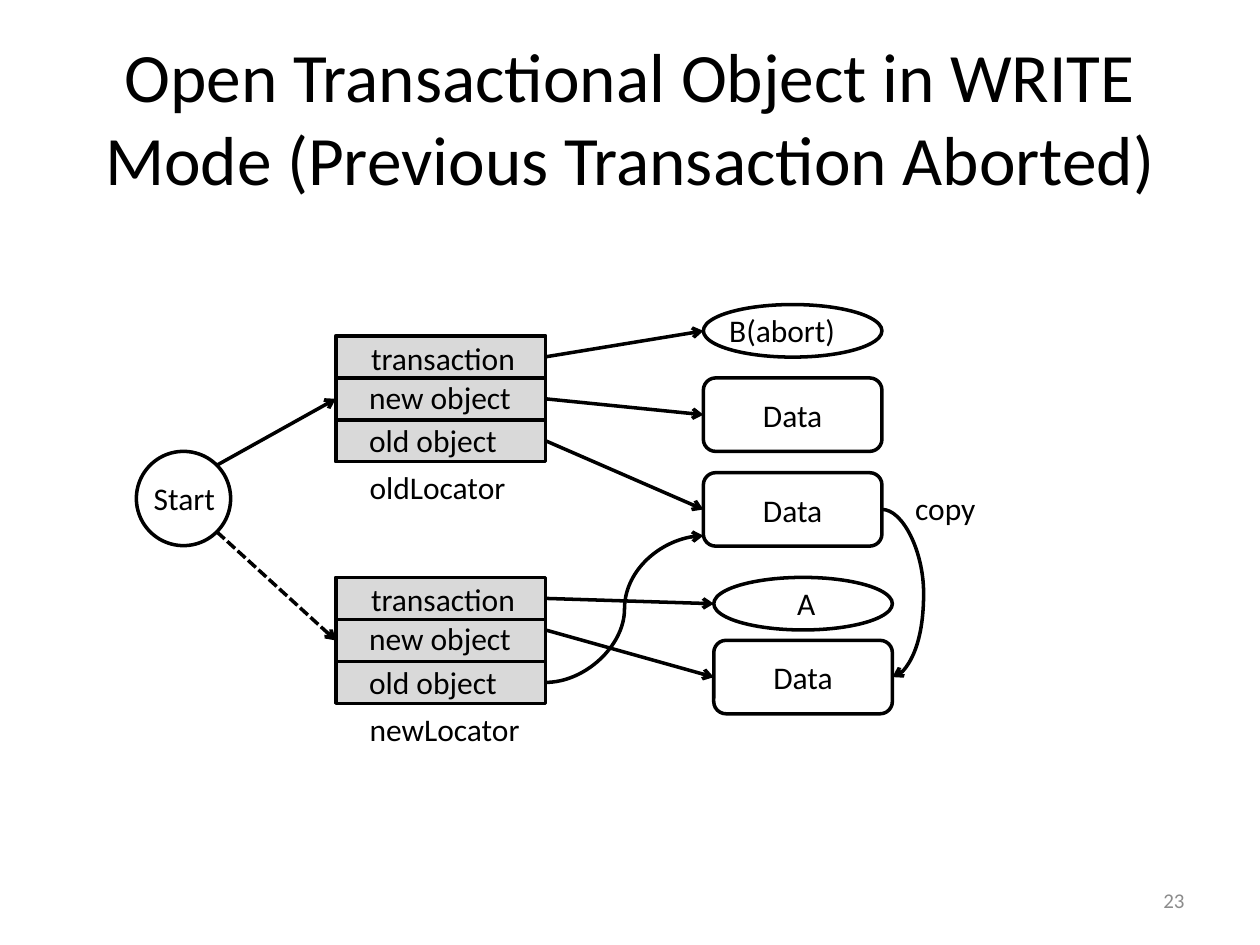
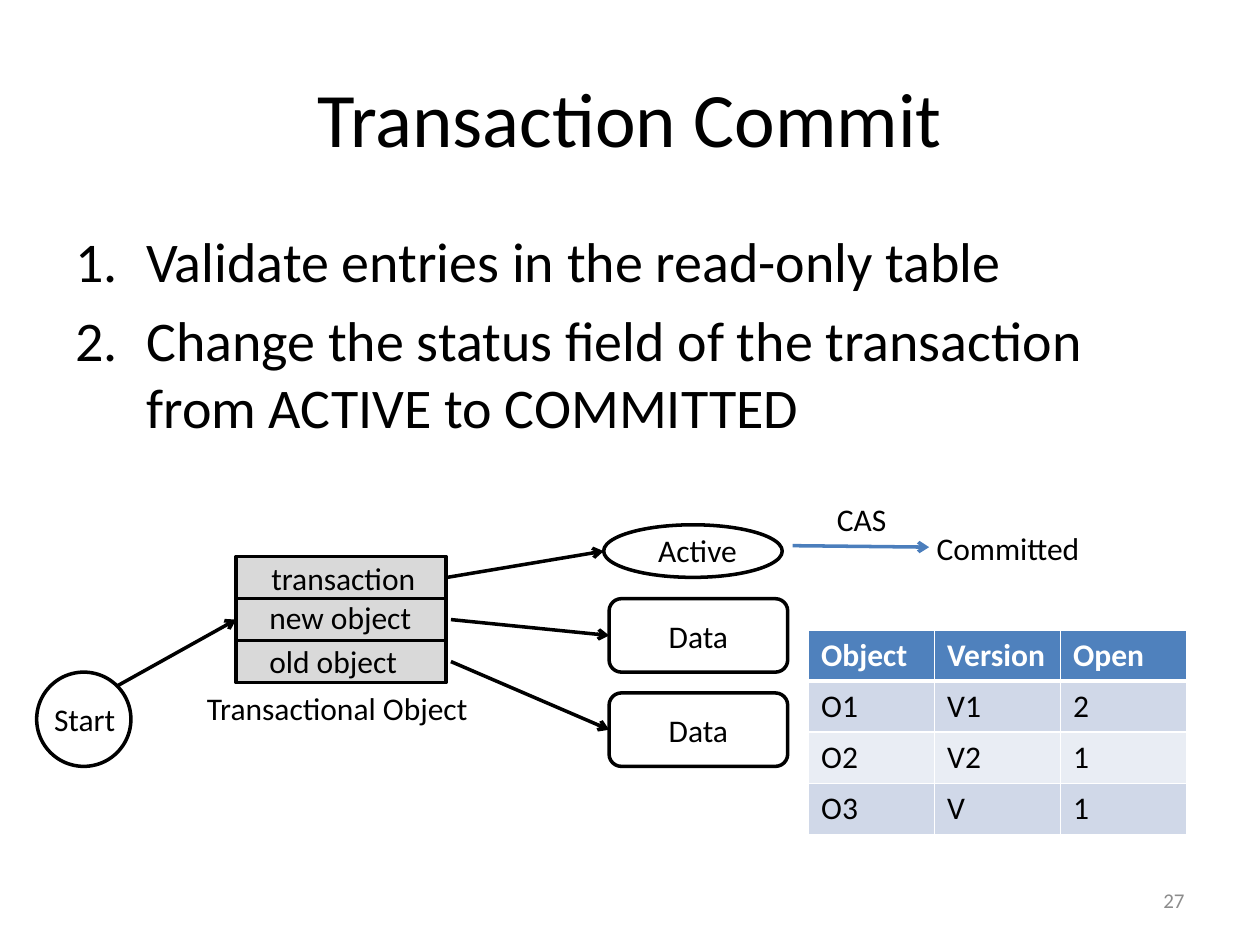
from dataclasses import dataclass
from math import sqrt

from lxml import etree
from pptx import Presentation
from pptx.dml.color import RGBColor
from pptx.enum.dml import MSO_LINE
from pptx.enum.shapes import MSO_CONNECTOR, MSO_SHAPE
from pptx.enum.text import MSO_ANCHOR, MSO_AUTO_SIZE, PP_ALIGN
from pptx.oxml.ns import qn
from pptx.util import Cm, Pt

OVAL, RECT, ROUNDED = MSO_SHAPE.OVAL, MSO_SHAPE.RECTANGLE, MSO_SHAPE.ROUNDED_RECTANGLE
STRAIGHT, CURVE = MSO_CONNECTOR.STRAIGHT, MSO_CONNECTOR.CURVE
LEFT, CENTER, RIGHT = PP_ALIGN.LEFT, PP_ALIGN.CENTER, PP_ALIGN.RIGHT
TOP, MIDDLE = MSO_ANCHOR.TOP, MSO_ANCHOR.MIDDLE
GROW = MSO_AUTO_SIZE.SHAPE_TO_FIT_TEXT
DASHED = MSO_LINE.SQUARE_DOT
LEFT_SIDE, RIGHT_SIDE = 1, 3


@dataclass(frozen=True)
class Theme:
    font: str = "Calibri"
    ink: str = "000000"
    paper: str = "FFFFFF"
    page_number: str = "8C8C8C"
    locator: str = "D9D9D9"
    accent: str = "4B7EBC"
    header: str = "4F81BD"
    bands: tuple = ("D0D8E8", "E9EDF4")
    title_size: float = 44
    long_title_size: float = 39.6
    body_size: float = 32
    label_size: float = 18
    page_size: float = 12
    stroke: float = 2


THEME = Theme()

# Sizes in centimetres
LOCATOR_SIZE = (4.23, 2.54)
START_SIZE = (1.9, 1.9)
STATUS_SIZE = (3.6, 1.06)
DATA_SIZE = (3.6, 1.48)
LABEL_HEIGHT = 1.03
FIELDS = [("transaction", 0.46, -0.07), ("new object", 0.42, 0.72), ("old object", 0.42, 1.6)]


# Text
def style(paragraph, size, color=THEME.ink, align=LEFT, bold=False):
    paragraph.alignment = align
    font = paragraph.font
    font.name, font.size, font.bold = THEME.font, Pt(size), bold
    font.color.rgb = RGBColor.from_string(color)


def add_text(slide, lines, box, size, color=THEME.ink, align=LEFT, anchor=TOP):
    frame = slide.shapes.add_textbox(*map(Cm, box)).text_frame
    frame.word_wrap = True
    frame.vertical_anchor = anchor
    frame.text = "\n".join(lines)
    for paragraph in frame.paragraphs:
        style(paragraph, size, color, align)
    return frame


def add_label(slide, text, left, top, width=3.6):
    frame = add_text(slide, [text], (left, top, width, LABEL_HEIGHT), THEME.label_size)
    frame.auto_size = GROW


def add_numbered_list(slide, items, box):
    frame = add_text(slide, items, box, THEME.body_size)
    for paragraph in frame.paragraphs:
        paragraph.space_before = Pt(THEME.body_size * 0.2)
        properties = paragraph._p.get_or_add_pPr()
        properties.set("marL", str(Cm(1.43)))
        properties.set("indent", str(-Cm(1.43)))
        number = etree.Element(qn("a:buAutoNum"), type="arabicPeriod")
        properties.find(qn("a:spcBef")).addnext(number)


def add_slide(prs, title, number, title_size=THEME.title_size):
    slide = prs.slides.add_slide(prs.slide_layouts[6])
    add_text(slide, [title], (1.27, 0.76, 22.86, 3.18), title_size,
             align=CENTER, anchor=MIDDLE)
    add_text(slide, [str(number)], (18.2, 17.65, 5.93, 1.01), THEME.page_size,
             THEME.page_number, RIGHT, MIDDLE)
    return slide


# Outlined shapes
def add_node(slide, kind, left, top, size, fill=None):
    node = slide.shapes.add_shape(kind, *map(Cm, (left, top, *size)))
    node.shadow.inherit = False
    node.line.color.rgb = RGBColor.from_string(THEME.ink)
    node.line.width = Pt(THEME.stroke)
    if fill:
        node.fill.solid()
        node.fill.fore_color.rgb = RGBColor.from_string(fill)
    else:
        node.fill.background()
    return node


def add_data(slide, left, top):
    data = add_node(slide, ROUNDED, left, top, DATA_SIZE)
    data.text_frame.text = "Data"
    data.text_frame.vertical_anchor = MIDDLE
    style(data.text_frame.paragraphs[0], THEME.label_size, align=CENTER)
    return data


def add_status(slide, text, left, top, text_left):
    status = add_node(slide, OVAL, left, top, STATUS_SIZE)
    add_label(slide, text, text_left, top)
    return status


def add_start(slide, left, top):
    start = add_node(slide, OVAL, left, top, START_SIZE)
    add_label(slide, "Start", left + 0.1, top + 0.44, START_SIZE[0])
    return start


def add_locator(slide, left, top):
    locator = add_node(slide, RECT, left, top, LOCATOR_SIZE, THEME.locator)
    for row in (1, 2):
        y = locator.top + locator.height * row // 3
        add_line(slide, (locator.left, y), (locator.left + locator.width, y))
    for text, dx, dy in FIELDS:
        add_label(slide, text, left + dx, top + dy)
    return locator


# Points on shapes
def left_middle(shape):
    return shape.left, shape.top + shape.height // 2


def right_middle(shape):
    return shape.left + shape.width, shape.top + shape.height // 2


def row_exit(locator, row, gap=0):
    return (locator.left + locator.width + Cm(gap),
            locator.top + locator.height * (2 * row + 1) // 6)


def circle_exit(circle, direction):
    """Right-hand diagonal point; direction is -1 for up, 1 for down."""
    radius = circle.width / 2
    reach = radius * sqrt(0.5)
    return (int(circle.left + radius + reach),
            int(circle.top + radius + direction * reach))


# Lines and arrows
def add_line(slide, begin, end, kind=STRAIGHT, color=THEME.ink, dash=None):
    line = slide.shapes.add_connector(kind, *begin, *end)
    line.line.color.rgb = RGBColor.from_string(color)
    line.line.width = Pt(THEME.stroke)
    if dash:
        line.line.dash_style = dash
    etree.SubElement(line._element.spPr, qn("a:effectLst"))
    return line


def add_arrow(slide, begin, end, source=None, target=None, bend=None, **look):
    """Draw an arrow; source and target are (shape, side) pairs to join."""
    arrow = add_line(slide, begin, end, **look)
    etree.SubElement(arrow.line._get_or_add_ln(), qn("a:tailEnd"), type="arrow")
    if source:
        arrow.begin_connect(*source)
    if target:
        arrow.end_connect(*target)
    if bend:
        guides = arrow._element.spPr.find(qn("a:prstGeom")).get_or_add_avLst()
        etree.SubElement(guides, qn("a:gd"), name="adj1", fmla=f"val {int(bend * 100000)}")


def point_at(slide, begin, target, source=None, **look):
    add_arrow(slide, begin, left_middle(target), source, (target, LEFT_SIDE), **look)


# Table
def set_borders(cell, top, bottom):
    properties = cell._tc.get_or_add_tcPr()
    for side, width in (("L", 1), ("R", 1), ("T", top), ("B", bottom)):
        border = etree.SubElement(properties, qn(f"a:ln{side}"), w=str(Pt(width)))
        fill = etree.SubElement(border, qn("a:solidFill"))
        etree.SubElement(fill, qn("a:srgbClr"), val=THEME.paper)


def add_read_table(slide, rows, left, top, column_width, row_height):
    table = slide.shapes.add_table(
        len(rows), len(rows[0]), Cm(left), Cm(top),
        Cm(column_width * len(rows[0])), Cm(row_height * len(rows))).table
    for r, values in enumerate(rows):
        is_header = r == 0
        table.rows[r].height = Cm(row_height)
        fill = THEME.header if is_header else THEME.bands[(r - 1) % 2]
        for c, value in enumerate(values):
            cell = table.cell(r, c)
            cell.text = value
            style(cell.text_frame.paragraphs[0], THEME.label_size,
                  THEME.paper if is_header else THEME.ink, bold=is_header)
            set_borders(cell, 3 if r == 1 else 1, 3 if is_header else 1)
            cell.fill.solid()
            cell.fill.fore_color.rgb = RGBColor.from_string(fill)


# Slides
def build_write_mode(prs):
    slide = add_slide(
        prs, "Open Transactional Object in WRITE Mode (Previous Transaction Aborted)",
        23, THEME.long_title_size)
    start = add_start(slide, 2.75, 9.1)
    old_locator = add_locator(slide, 6.77, 6.77)
    new_locator = add_locator(slide, 6.77, 11.64)
    add_label(slide, "oldLocator", 7.2, 9.31)
    add_label(slide, "newLocator", 7.2, 14.18)

    aborted = add_status(slide, "B(abort)", 14.18, 6.14, 14.45)
    active = add_status(slide, "A", 14.39, 11.64, 15.82)
    discarded_data = add_data(slide, 14.18, 7.62)
    old_data = add_data(slide, 14.18, 9.53)
    new_data = add_data(slide, 14.39, 12.91)

    point_at(slide, circle_exit(start, -1), old_locator)
    point_at(slide, circle_exit(start, 1), new_locator, dash=DASHED)
    add_arrow(slide, row_exit(old_locator, 0), left_middle(aborted))
    point_at(slide, row_exit(old_locator, 1), discarded_data, (old_locator, RIGHT_SIDE))
    point_at(slide, row_exit(old_locator, 2), old_data)
    add_arrow(slide, row_exit(new_locator, 0), left_middle(active))
    point_at(slide, (row_exit(new_locator, 1)[0], Cm(12.7)), new_data)
    add_arrow(slide, row_exit(new_locator, 2), (old_data.left, Cm(10.8)),
              kind=CURVE, bend=0.5)
    add_arrow(slide, right_middle(old_data), right_middle(new_data),
              (old_data, RIGHT_SIDE), (new_data, RIGHT_SIDE), kind=CURVE, bend=4)
    add_label(slide, "copy", 18.2, 9.73, 1.9)


def build_commit(prs):
    slide = add_slide(prs, "Transaction Commit", 27)
    add_numbered_list(slide, [
        "Validate entries in the read-only table",
        "Change the status field of the transaction from ACTIVE to COMMITTED",
    ], (1.27, 4.45, 22.86, 5.5))
    add_read_table(slide, [
        ("Object", "Version", "Open"),
        ("O1", "V1", "2"),
        ("O2", "V2", "1"),
        ("O3", "V", "1"),
    ], 16.3, 12.7, 2.54, 1.03)

    start = add_start(slide, 0.74, 13.55)
    locator = add_locator(slide, 4.76, 11.22)
    add_label(slide, "Transactional Object", 3.92, 13.76, 5.93)
    status = add_status(slide, "Active", 12.17, 10.58, 13.02)
    new_data = add_data(slide, 12.28, 12.07)
    old_data = add_data(slide, 12.28, 13.97)

    point_at(slide, circle_exit(start, -1), locator)
    add_arrow(slide, row_exit(locator, 0), left_middle(status))
    for row, data in ((1, new_data), (2, old_data)):
        point_at(slide, row_exit(locator, row, gap=0.1), data)

    # Status change
    add_arrow(slide, (Cm(15.98), Cm(11)), (Cm(18.73), Cm(11.03)), color=THEME.accent)
    add_label(slide, "CAS", 16.62, 9.95, 1.7)
    add_label(slide, "Committed", 18.63, 10.54, 4.23)


def main():
    prs = Presentation()
    prs.slide_width, prs.slide_height = Cm(25.4), Cm(19.05)
    build_write_mode(prs)
    build_commit(prs)
    prs.save("out.pptx")


if __name__ == "__main__":
    main()
